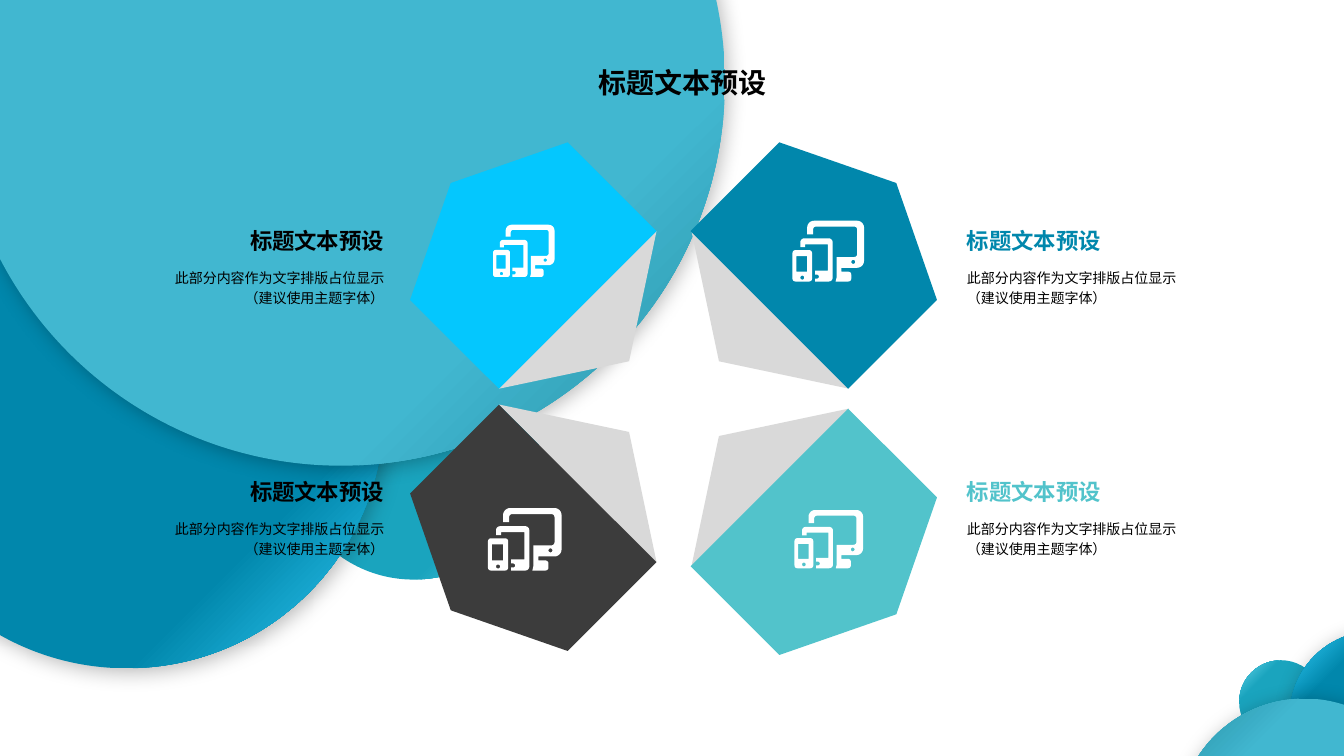
from copy import deepcopy
from dataclasses import dataclass

from lxml.etree import SubElement
from pptx import Presentation
from pptx.dml.color import RGBColor
from pptx.enum.shapes import MSO_SHAPE
from pptx.enum.text import MSO_ANCHOR, MSO_AUTO_SIZE, PP_ALIGN
from pptx.oxml.ns import qn
from pptx.util import Inches, Pt


@dataclass(frozen=True)
class Theme:
    font: str = "Noto Sans CJK SC"
    title_size: int = 20
    heading_size: int = 16
    body_size: int = 10
    ink: str = "000000"
    white: str = "FFFFFF"
    fold: str = "D9D9D9"
    sky: str = "04C7FE"
    ocean: str = "0187AC"
    charcoal: str = "3C3C3C"
    teal: str = "52C3CB"
    small_bubble: tuple = ("1AA4BE", "64D5EA")
    middle_bubble: tuple = ("0187AC", "36D3FE")
    large_bubble: tuple = ("41B7D0", "298FA4")


HEADING = "标题文本预设"
BODY = "此部分内容作为文字排版占位显示\n（建议使用主题字体）"

# Outlines of the devices icon: corners as (x, y, radius) on a grid 73 units wide.
ICON_GRID = 73
DEVICES = [
    [(8, 56, 2), (12, 56, 2), (12, 60, 2), (8, 60, 2)],
    [(60, 40, 2), (64, 40, 2), (64, 44, 2), (60, 44, 2)],
    [(4, 36, 0), (15, 36, 0), (15, 52, 0), (4, 52, 0)],
    [(0, 30, 3), (20, 30, 3), (20, 62, 3), (0, 62, 3)],
    [(8, 18, 4), (41, 18, 4), (41, 62, 4), (23, 62, 0), (23, 59, 0),
     (27, 59, 2), (27, 55, 2), (23, 55, 0), (23, 51, 0), (36, 51, 0),
     (36, 24, 0), (13, 24, 0), (13, 27, 0), (8, 27, 0)],
    [(15, 0, 7), (73, 0, 7), (73, 48, 7), (50, 48, 0), (50, 52, 0),
     (60, 52, 3), (60, 62, 3), (44, 62, 0), (45, 58, 0), (45, 37, 0),
     (66, 37, 3), (66, 6, 3), (21, 6, 3), (21, 14, 0), (15, 14, 0)],
]


def apply(target, values):
    for attribute, value in values.items():
        setattr(target, attribute, value)


def toward(start, end, distance):
    dx, dy = end[0] - start[0], end[1] - start[1]
    share = distance / (dx * dx + dy * dy) ** 0.5
    return start[0] + dx * share, start[1] + dy * share


def rounded(corners, steps=6):
    """Replace each corner that has a radius by points along a curve."""
    points = []
    for index, (x, y, radius) in enumerate(corners):
        if not radius:
            points.append((x, y))
            continue
        before = toward((x, y), corners[index - 1], radius)
        after = toward((x, y), corners[(index + 1) % len(corners)], radius)
        # Weight the corner so that the curve is close to a circular arc.
        for step in range(steps + 1):
            t = step / steps
            a, b, c = (1 - t) ** 2, 1.41 * t * (1 - t), t * t
            points.append(tuple((a * p + b * q + c * r) / (a + b + c)
                                for p, q, r in zip(before, (x, y), after)))
    return points


class SlideBuilder:
    def __init__(self, slide, theme):
        self.slide = slide
        self.theme = theme

    def paint(self, shape, color):
        shape.shadow.inherit = False
        shape.line.fill.background()
        shape.fill.solid()
        shape.fill.fore_color.rgb = RGBColor.from_string(color)

    def preset(self, kind, left, top, width, height, color, rotation=0):
        shape = self.slide.shapes.add_shape(
            kind, Inches(left), Inches(top), Inches(width), Inches(height))
        self.paint(shape, color)
        shape.rotation = rotation
        return shape

    def bubble(self, left, top, size, colors, angle, shadow):
        circle = self.preset(MSO_SHAPE.OVAL, left, top, size, size, colors[0])
        circle.fill.gradient()
        circle.fill.gradient_angle = angle
        for stop, position, color in zip(circle.fill.gradient_stops, (0.75, 1), colors):
            stop.position = position
            stop.color.rgb = RGBColor.from_string(color)
        if shadow:
            effects = circle.element.spPr.find(qn("a:effectLst"))
            outer = SubElement(effects, qn("a:outerShdw"), blurRad=str(Pt(15)),
                               dist=str(Pt(3)), dir="2700000", rotWithShape="0")
            black = SubElement(outer, qn("a:srgbClr"), val=self.theme.ink)
            SubElement(black, qn("a:alpha"), val="27000")

    def folded_card(self, plate, fold, plate_turn, fold_turn, color):
        self.preset(MSO_SHAPE.ISOSCELES_TRIANGLE, *fold, 2.21, 0.72,
                    self.theme.fold, fold_turn)
        card = self.preset(MSO_SHAPE.PENTAGON, *plate, 1.78, 2.21, color, plate_turn)
        card.adjustments[0] = 0.3

    def devices_icon(self, left, top, width):
        precision = 100
        builder = None
        for corners in DEVICES:
            start, *rest = [(x * precision, y * precision) for x, y in rounded(corners)]
            if builder is None:
                builder = self.slide.shapes.build_freeform(
                    *start, scale=Inches(width) / (ICON_GRID * precision))
            else:
                builder.move_to(*start)
            builder.add_line_segments(rest, close=True)
        self.paint(builder.convert_to_shape(Inches(left), Inches(top)), self.theme.white)

    def set_text(self, frame, text, size, color, bold, frame_format, paragraph_format):
        apply(frame, frame_format)
        paragraph = frame.paragraphs[0]
        paragraph.text = text
        apply(paragraph, paragraph_format)
        for run in paragraph.runs:
            apply(run.font, {"name": self.theme.font, "size": Pt(size), "bold": bold})
            run.font.color.rgb = RGBColor.from_string(color)
            properties = run.font._element
            SubElement(properties, qn("a:ea"), typeface=self.theme.font)
            for line_break in paragraph._p.findall(qn("a:br")):
                if len(line_break) == 0:
                    line_break.append(deepcopy(properties))

    def text_box(self, left, top, width, height, text, size, color, bold,
                 align, anchor, wrap, spacing):
        box = self.slide.shapes.add_textbox(
            Inches(left), Inches(top), Inches(width), Inches(height))
        self.set_text(box.text_frame, text, size, color, bold,
                      {"word_wrap": wrap, "vertical_anchor": anchor,
                       "margin_left": Inches(0.08), "margin_right": Inches(0.08),
                       "margin_top": 0, "margin_bottom": 0},
                      {"alignment": align, "line_spacing": spacing})

    def caption(self, left, top, width, color, align):
        self.text_box(left, top + 0.27, width, 0.64, BODY, self.theme.body_size,
                      self.theme.ink, False, align, MSO_ANCHOR.MIDDLE, True, 1.2)
        self.text_box(left, top, width, 0.27, HEADING, self.theme.heading_size,
                      color, True, align, MSO_ANCHOR.TOP, False, 1.0)

    def title(self, text):
        title = self.slide.shapes.title
        apply(title, {"left": Inches(3.68), "top": Inches(0.53),
                      "width": Inches(6.18), "height": Inches(0.58)})
        self.set_text(title.text_frame, text, self.theme.title_size, self.theme.ink, True,
                      {"word_wrap": False, "auto_size": MSO_AUTO_SIZE.NONE,
                       "vertical_anchor": MSO_ANCHOR.MIDDLE},
                      {"alignment": PP_ALIGN.CENTER})
        # The placeholder comes first in the tree; bring it in front of the bubbles.
        self.slide.shapes._spTree.append(title.element)


def main():
    theme = Theme()
    deck = Presentation()
    apply(deck, {"slide_width": Inches(13.33), "slide_height": Inches(7.5)})
    page = SlideBuilder(deck.slides.add_slide(deck.slide_layouts[5]), theme)

    bubble_colors = (theme.small_bubble, theme.middle_bubble, theme.large_bubble)
    clusters = [
        (315, [(2.85, 3.25, 2.5), (-1.3, 1.52, 5.11), (-0.43, -3, 7.62)]),
        (135, [(12.29, 6.55, 0.83), (12.79, 6.26, 1.69), (11.68, 6.93, 2.52)]),
    ]
    for angle, circles in clusters:
        for circle, colors in zip(circles, bubble_colors):
            page.bubble(*circle, colors, angle, colors != theme.small_bubble)

    left_text = (1.26, 2.63, PP_ALIGN.RIGHT)
    right_text = (9.51, 2.69, PP_ALIGN.LEFT)
    # plate, fold, plate turn, fold turn, fill, heading colour, text column, text top, icon
    cards = [
        ((4.21, 1.34), (4.88, 2.97), 225, 135, theme.sky, theme.ink,
         left_text, 2.25, (4.89, 2.23, 0.61)),
        ((7.37, 1.34), (6.28, 2.97), 315, 225, theme.ocean, theme.ocean,
         right_text, 2.25, (7.86, 2.19, 0.71)),
        ((4.21, 4.32), (4.88, 4.18), 135, 45, theme.charcoal, theme.ink,
         left_text, 4.74, (4.84, 5.04, 0.73)),
        ((7.37, 4.36), (6.28, 4.22), 45, 315, theme.teal, theme.teal,
         right_text, 4.74, (7.88, 5.06, 0.68)),
    ]
    for plate, fold, plate_turn, fold_turn, fill, heading, column, top, icon in cards:
        page.folded_card(plate, fold, plate_turn, fold_turn, fill)
        left, width, align = column
        page.caption(left, top, width, heading, align)
        page.devices_icon(*icon)

    page.title(HEADING)
    deck.save("out.pptx")


if __name__ == "__main__":
    main()
